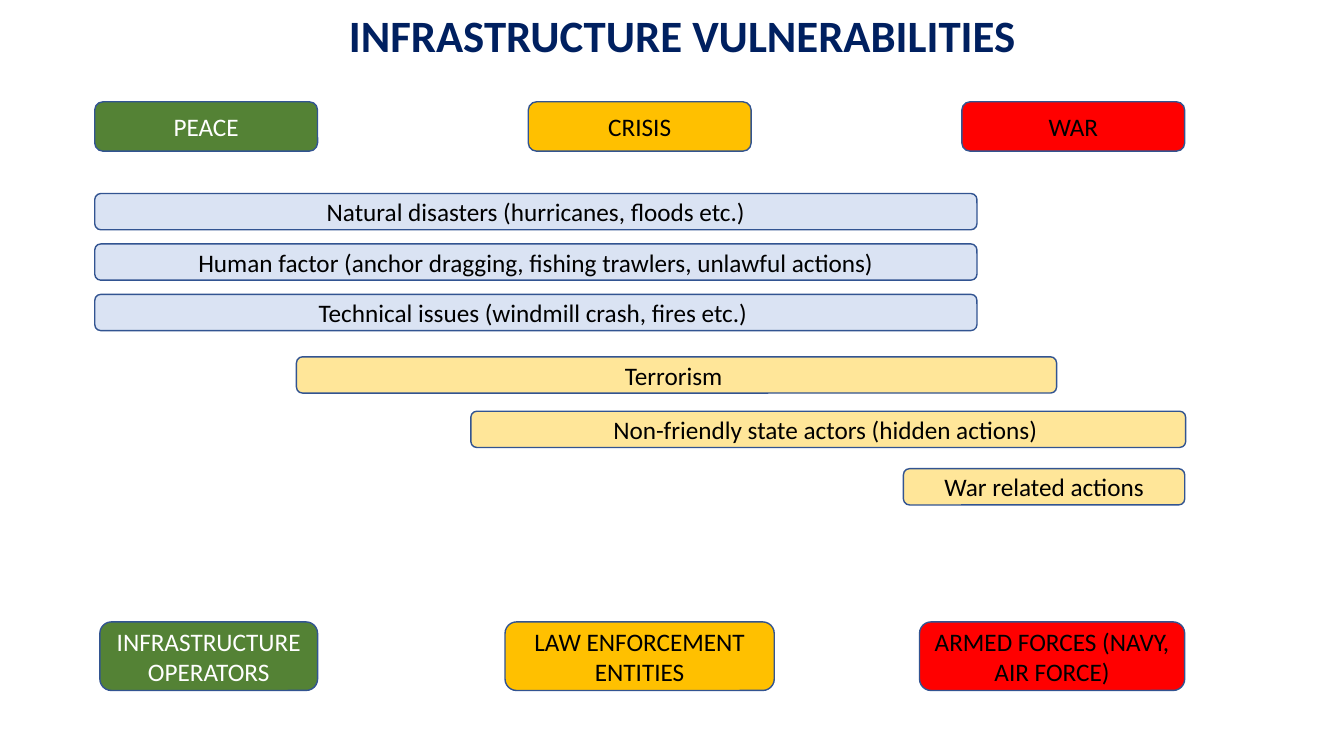
from pptx import Presentation
from pptx.dml.color import RGBColor
from pptx.enum.shapes import MSO_SHAPE
from pptx.enum.text import MSO_ANCHOR, PP_ALIGN
from pptx.util import Inches, Pt

ROUNDED = MSO_SHAPE.ROUNDED_RECTANGLE
MIDDLE = MSO_ANCHOR.MIDDLE
CENTER = PP_ALIGN.CENTER

NAVY = RGBColor(0x00, 0x20, 0x60)
OUTLINE = RGBColor(0x32, 0x54, 0x91)
GREEN = RGBColor(0x54, 0x82, 0x35)
AMBER = RGBColor(0xFF, 0xC0, 0x00)
RED = RGBColor(0xFF, 0x00, 0x00)
PALE_BLUE = RGBColor(0xDA, 0xE3, 0xF3)
PALE_YELLOW = RGBColor(0xFF, 0xE6, 0x99)
WHITE = RGBColor(0xFF, 0xFF, 0xFF)
BLACK = RGBColor(0x00, 0x00, 0x00)

LEFT_EDGE = 7.05
PHASE_STEP = 32.26
HAZARD_TOP = 25.6
HAZARD_STEP = 6.67

PHASES = [("PEACE", GREEN, WHITE), ("CRISIS", AMBER, BLACK), ("WAR", RED, BLACK)]
RESPONDERS = [
    ("INFRASTRUCTURE OPERATORS", 7.43, 16.2),
    ("LAW ENFORCEMENT ENTITIES", 37.58, 20.03),
    ("ARMED FORCES (NAVY, AIR FORCE)", 68.42, 19.73),
]
HAZARDS = [
    "Natural disasters (hurricanes, floods etc.)",
    "Human factor (anchor dragging, fishing trawlers, unlawful actions)",
    "Technical issues (windmill crash, fires etc.) ",
]
THREATS = [
    ("Terrorism ", 22.06, 47.2, 56.56),
    ("Non-friendly state actors (hidden actions) ", 35.03, 54.4, 53.19),
    ("War related actions", 67.22, 62, 20.93),
]


class SlideBuilder:
    """Draws styled elements on a slide, placed in percent of its width and height."""

    font_name = "Calibri"
    title_size = Pt(32)
    label_size = Pt(18)

    def __init__(self, presentation):
        self.column = presentation.slide_width / 100
        self.row = presentation.slide_height / 100
        self.slide = presentation.slides.add_slide(presentation.slide_layouts[6])

    def place(self, left, top, width, height):
        return (round(left * self.column), round(top * self.row),
                round(width * self.column), round(height * self.row))

    def add_text(self, shape, text, size, color, bold=False):
        frame = shape.text_frame
        frame.word_wrap = True
        frame.vertical_anchor = MIDDLE
        paragraph = frame.paragraphs[0]
        paragraph.alignment = CENTER
        run = paragraph.add_run()
        run.text = text
        run.font.name = self.font_name
        run.font.size = size
        run.font.bold = bold
        run.font.color.rgb = color
        return paragraph

    def title(self, text, left, top, width, height):
        box = self.slide.shapes.add_textbox(*self.place(left, top, width, height))
        paragraph = self.add_text(box, text, self.title_size, NAVY, bold=True)
        paragraph.line_spacing = 0.9

    def box(self, text, left, top, width, height, fill, color=BLACK):
        shape = self.slide.shapes.add_shape(ROUNDED, *self.place(left, top, width, height))
        shape.shadow.inherit = False
        shape.fill.solid()
        shape.fill.fore_color.rgb = fill
        shape.line.color.rgb = OUTLINE
        shape.line.width = Pt(1)
        self.add_text(shape, text, self.label_size, color)


def main():
    presentation = Presentation()
    presentation.slide_width = Inches(13.33)
    presentation.slide_height = Inches(7.5)
    builder = SlideBuilder(presentation)

    builder.title("INFRASTRUCTURE VULNERABILITIES", 11.55, 0.93, 78.47, 8.27)
    for index, (phase, fill, color) in enumerate(PHASES):
        builder.box(phase, LEFT_EDGE + index * PHASE_STEP, 13.47, 16.58, 6.53, fill, color)
    for (responder, left, width), (_, fill, color) in zip(RESPONDERS, PHASES):
        builder.box(responder, left, 82.27, width, 9.07, fill, color)
    for index, hazard in enumerate(HAZARDS):
        builder.box(hazard, LEFT_EDGE, HAZARD_TOP + index * HAZARD_STEP, 65.64, 4.8, PALE_BLUE)
    for threat, left, top, width in THREATS:
        builder.box(threat, left, top, width, 4.8, PALE_YELLOW)

    presentation.save("out.pptx")


if __name__ == "__main__":
    main()
